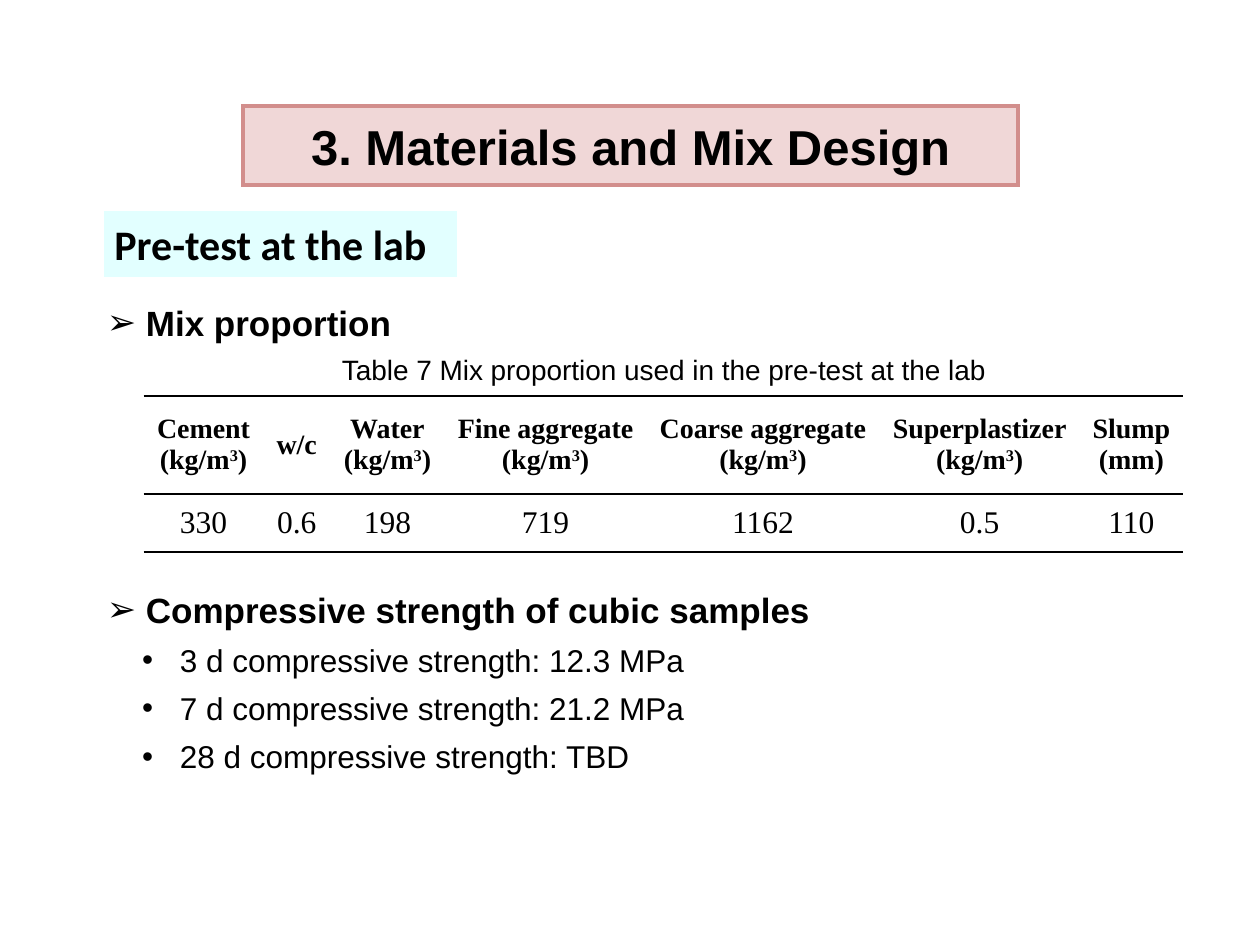
from lxml import etree
from pptx import Presentation
from pptx.dml.color import RGBColor
from pptx.enum.shapes import MSO_SHAPE
from pptx.enum.text import MSO_ANCHOR, PP_ALIGN
from pptx.oxml.ns import qn
from pptx.util import Inches, Pt

RECTANGLE = MSO_SHAPE.RECTANGLE
MIDDLE = MSO_ANCHOR.MIDDLE
LEFT, CENTER = PP_ALIGN.LEFT, PP_ALIGN.CENTER


def color(hex_code):
    return RGBColor.from_string(hex_code)


def write(paragraph, text, size=18, font="Arial", bold=False, align=LEFT,
          baseline=0, bullet=None, margin=0, hanging=0, after=0):
    paragraph.alignment = align
    paragraph.space_after = Pt(after)
    run = paragraph.add_run()
    run.text = text
    run.font.size = Pt(size)
    run.font.name = font
    run.font.bold = bold
    run.font.color.rgb = color("000000")
    if baseline:
        run.font._element.set("baseline", str(baseline))
    if bullet:
        properties = paragraph._p.get_or_add_pPr()
        properties.set("marL", str(Inches(margin)))
        properties.set("indent", str(-Inches(hanging)))
        etree.SubElement(properties, qn("a:buFont"), typeface="Arial")
        etree.SubElement(properties, qn("a:buChar"), char=bullet)


prs = Presentation()
prs.slide_width, prs.slide_height = Inches(10), Inches(7.5)
slide = prs.slides.add_slide(prs.slide_layouts[6])

banners = [
    ("3. Materials and Mix Design", (1.93, 0.84, 6.15, 0.63), "E6B9B8", "D28E8C",
     dict(size=28, bold=True, align=CENTER)),
    ("Pre-test at the lab", (0.81, 1.66, 2.83, 0.55), "CCFFFF", "FFFFFF",
     dict(size=24, bold=True, font="Calibri")),
]
for text, place, fill, outline, style in banners:
    banner = slide.shapes.add_shape(RECTANGLE, *map(Inches, place))
    banner.shadow.inherit = False
    banner.fill.solid()
    banner.fill.fore_color.rgb = color(fill)
    tint = banner._element.spPr.find(qn("a:solidFill"))[0]
    etree.SubElement(tint, qn("a:alpha"), val="56000")
    banner.line.color.rgb = color(outline)
    banner.line.width = Pt(2)
    etree.SubElement(banner.line._ln, qn("a:miter"), lim="800000")
    banner.text_frame.word_wrap = True
    banner.text_frame.vertical_anchor = MIDDLE
    write(banner.text_frame.paragraphs[0], text, **style)

heading = dict(size=20, bold=True, bullet="➢", margin=0.51, hanging=0.31, after=6)
item = dict(size=18, bullet="•", margin=0.78, hanging=0.3, after=6)
caption = dict(size=16, align=CENTER)
text_blocks = [
    ((0.55, 4.62, 8.74, 1.6), [
        ("Compressive strength of cubic samples", heading),
        ("3 d compressive strength: 12.3 MPa", item),
        ("7 d compressive strength: 21.2 MPa", item),
        ("28 d compressive strength: TBD", item),
    ]),
    ((0.55, 2.34, 9, 0.44), [("Mix proportion", heading)]),
    ((2.49, 2.75, 5.56, 0.37),
     [("Table 7 Mix proportion used in the pre-test at the lab", caption)]),
]
for place, lines in text_blocks:
    frame = slide.shapes.add_textbox(*map(Inches, place)).text_frame
    frame.word_wrap = True
    for index, (text, style) in enumerate(lines):
        paragraph = frame.add_paragraph() if index else frame.paragraphs[0]
        write(paragraph, text, **style)

mix = [
    ("Cement", "(kg/m3)", "330", 0.95),
    ("w/c", "", "0.6", 0.53),
    ("Water", "(kg/m3)", "198", 0.91),
    ("Fine aggregate", "(kg/m3)", "719", 1.6),
    ("Coarse aggregate", "(kg/m3)", "1162", 1.85),
    ("Superplastizer", "(kg/m3)", "0.5", 1.59),
    ("Slump", "(mm)", "110", 0.82),
]
table = slide.shapes.add_table(2, len(mix), Inches(1.14), Inches(3.14),
                               Inches(8.26), Inches(1.24)).table
table.first_row = table.horz_banding = False
table.rows[0].height, table.rows[1].height = Inches(0.78), Inches(0.46)
header = dict(size=16, font="Times New Roman", bold=True, align=CENTER)
value_style = dict(size=18, font="Times New Roman", align=CENTER)

for column, (component, unit, value, width) in enumerate(mix):
    table.columns[column].width = Inches(width)
    name_cell, value_cell = table.cell(0, column), table.cell(1, column)
    write(name_cell.text_frame.paragraphs[0], component, **header)
    if unit:
        unit_line = name_cell.text_frame.add_paragraph()
        base, power, closing = unit.partition("3")
        write(unit_line, base, **header)
        if power:
            write(unit_line, power, baseline=30000, **header)
            write(unit_line, closing, **header)
    write(value_cell.text_frame.paragraphs[0], value, **value_style)

    for cell, top, bottom in ((name_cell, 1.5, 1), (value_cell, 1, 1.5)):
        cell.vertical_anchor = MIDDLE
        cell.margin_left = cell.margin_right = Inches(0.08)
        cell.margin_top = cell.margin_bottom = 0
        cell.fill.background()
        borders = (("a:lnL", 0), ("a:lnR", 0), ("a:lnT", top), ("a:lnB", bottom))
        for position, (side, weight) in enumerate(borders):
            border = etree.Element(qn(side), w=str(Pt(weight)))
            if weight:
                ink = etree.SubElement(border, qn("a:solidFill"))
                etree.SubElement(ink, qn("a:srgbClr"), val="000000")
            else:
                etree.SubElement(border, qn("a:noFill"))
            cell._tc.tcPr.insert(position, border)

prs.save("out.pptx")
